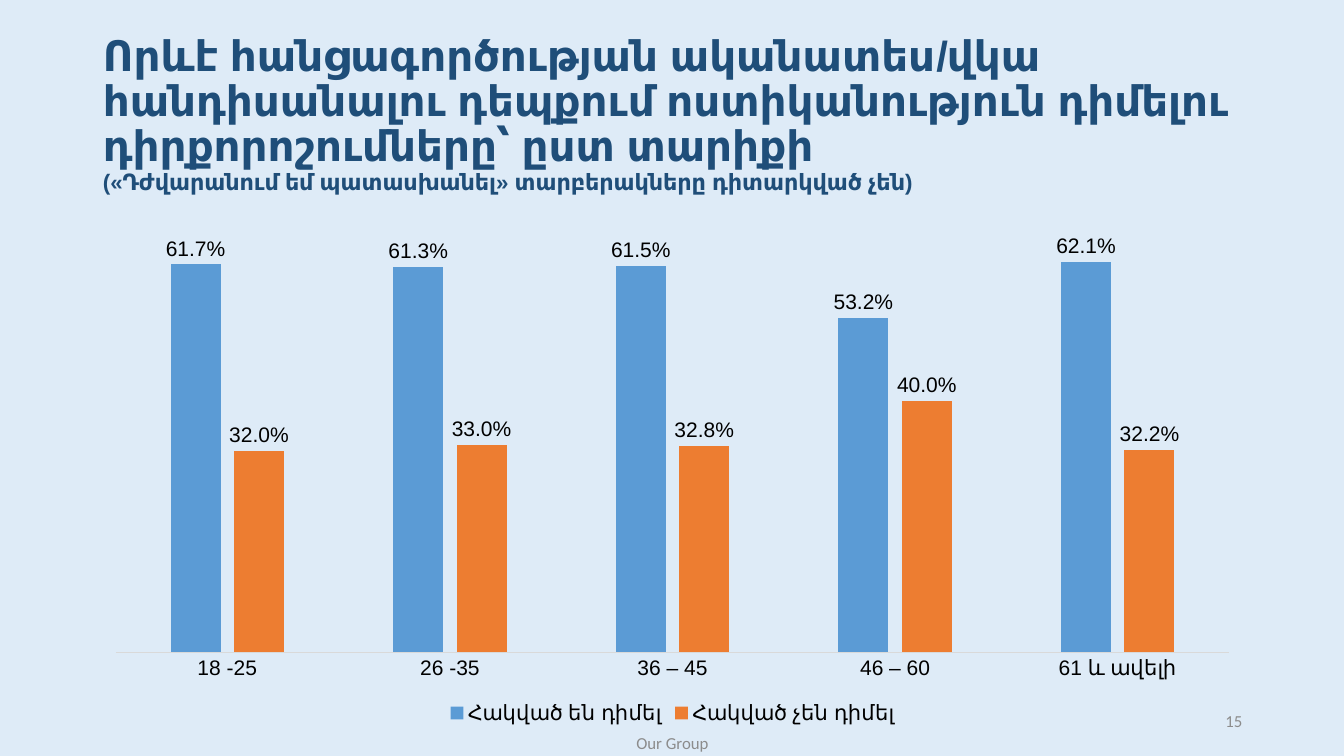
from pptx import Presentation
from pptx.chart.data import CategoryChartData
from pptx.dml.color import RGBColor
from pptx.enum.chart import XL_CHART_TYPE, XL_LABEL_POSITION, XL_LEGEND_POSITION, XL_TICK_MARK
from pptx.enum.text import MSO_ANCHOR, MSO_AUTO_SIZE, PP_ALIGN
from pptx.util import Inches, Pt

CLUSTERED = XL_CHART_TYPE.COLUMN_CLUSTERED
OUTSIDE_END = XL_LABEL_POSITION.OUTSIDE_END
BOTTOM = XL_LEGEND_POSITION.BOTTOM
NO_TICK = XL_TICK_MARK.NONE
MIDDLE = MSO_ANCHOR.MIDDLE
NO_AUTOFIT = MSO_AUTO_SIZE.NONE
LEFT, CENTER, RIGHT = PP_ALIGN.LEFT, PP_ALIGN.CENTER, PP_ALIGN.RIGHT

PERCENT = "###0.0%"
MARGIN = 0.92
CONTENT_WIDTH = 11.5


def color(hex_string):
    return RGBColor.from_string(hex_string)


def style(font, size, hex_string, name="Arial", bold=False):
    font.size = Pt(size)
    font.name = name
    font.bold = bold
    font.color.rgb = color(hex_string)


presentation = Presentation()
presentation.slide_width = Inches(13.33)
presentation.slide_height = Inches(7.5)
slide = presentation.slides.add_slide(presentation.slide_layouts[5])
slide.background.fill.solid()
slide.background.fill.fore_color.rgb = color("DEEBF7")

# Title and its smaller qualifying line
title = slide.shapes.title
title.left, title.top = Inches(MARGIN), Inches(0.4)
title.width, title.height = Inches(CONTENT_WIDTH), Inches(1.48)
title.text_frame.text = (
    "Որևէ հանցագործության ականատես/վկա հանդիսանալու դեպքում ոստիկանություն "
    "դիմելու դիրքորոշումները՝ ըստ տարիքի \v"
    "(«Դժվարանում եմ պատասխանել» տարբերակները դիտարկված չեն)"
)
title.text_frame.auto_size = NO_AUTOFIT
title.text_frame.vertical_anchor = MIDDLE
heading = title.text_frame.paragraphs[0]
heading.alignment = LEFT
heading.line_spacing = 0.9
for run, size in zip(heading.runs, (30, 16)):
    style(run.font, size, "1F4E79", bold=True)

# Answers by age group
answers = CategoryChartData(number_format=PERCENT)
answers.categories = ["18 -25", "26 -35", "36 – 45", "46 – 60", "61 և ավելի"]
answers.add_series("Հակված են դիմել", (0.617, 0.613, 0.615, 0.532, 0.621))
answers.add_series("Հակված չեն դիմել", (0.32, 0.33, 0.328, 0.4, 0.322))
chart = slide.shapes.add_chart(
    CLUSTERED, Inches(MARGIN), Inches(2), Inches(CONTENT_WIDTH), Inches(5.23), answers
).chart
style(chart.font, 15, "000000")
chart.has_title = False
chart.has_legend = True
chart.legend.position = BOTTOM
chart.legend.include_in_layout = False
style(chart.legend.font, 15, "000000")

age_axis = chart.category_axis
age_axis.major_tick_mark = age_axis.minor_tick_mark = NO_TICK
age_axis.format.line.color.rgb = color("D9D9D9")
age_axis.format.line.width = Pt(0.75)
style(age_axis.tick_labels.font, 15, "000000")

share_axis = chart.value_axis
share_axis.visible = False
share_axis.has_major_gridlines = False
share_axis.minimum_scale = 0
share_axis.maximum_scale = 0.7
share_axis.tick_labels.number_format = PERCENT
share_axis.tick_labels.number_format_is_linked = False

bars = chart.plots[0]
bars.gap_width = 219
bars.overlap = -27
bars.vary_by_categories = False
for series, fill in zip(bars.series, ("5B9BD5", "ED7D31")):
    series.format.fill.solid()
    series.format.fill.fore_color.rgb = color(fill)
    labels = series.data_labels
    labels.show_value = True
    labels.position = OUTSIDE_END
    labels.number_format = PERCENT
    labels.number_format_is_linked = False
    style(labels.font, 15, "000000")

# Page number and footer
for text, left, top, width, alignment in (
    ("15", 9.42, 6.95, 3, RIGHT),
    ("Our Group", 4.42, 7.17, 4.5, CENTER),
):
    frame = slide.shapes.add_textbox(
        Inches(left), Inches(top), Inches(width), Inches(0.4)
    ).text_frame
    frame.word_wrap = True
    frame.vertical_anchor = MIDDLE
    frame.text = text
    frame.paragraphs[0].alignment = alignment
    style(frame.paragraphs[0].runs[0].font, 12, "8C8C8C", "Calibri")

presentation.save("out.pptx")
